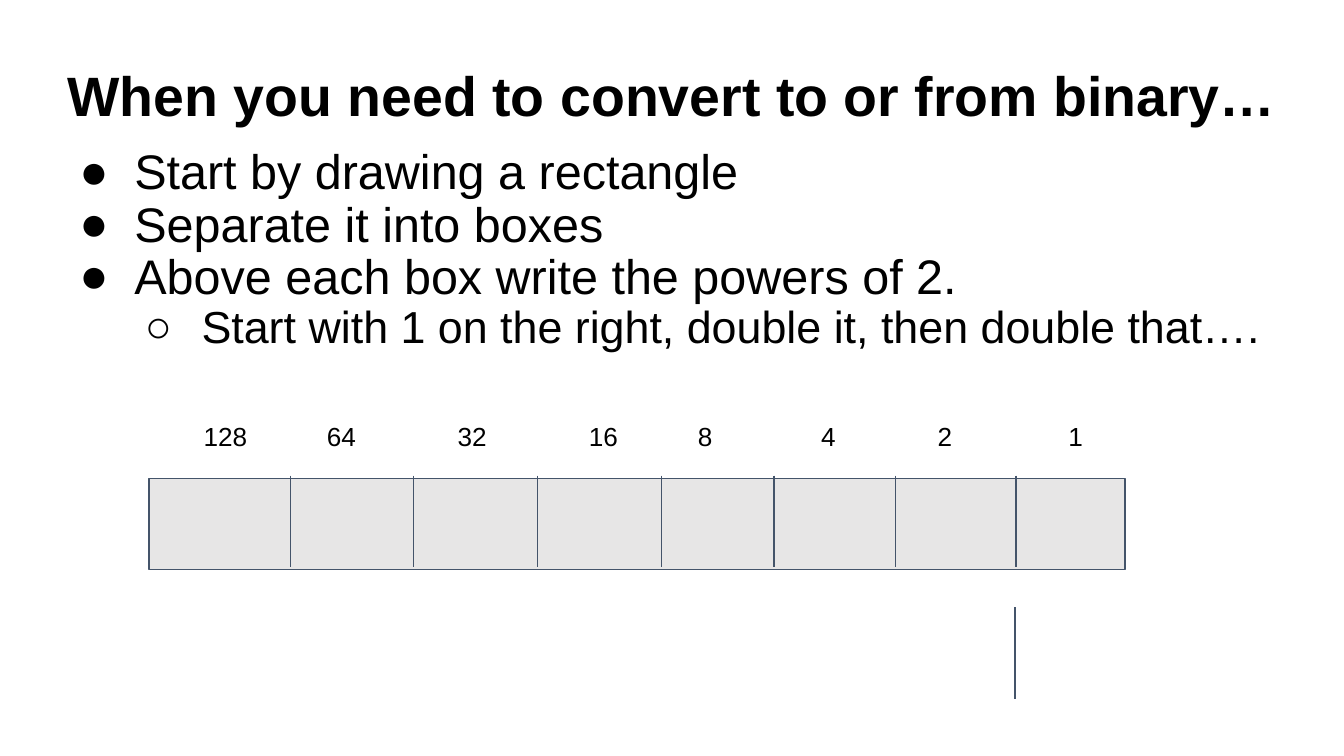
import pptx
import pptx.util
import pptx.dml.color
import pptx.enum.shapes
import pptx.enum.text
import pptx.oxml.ns
from lxml import etree

Cm, Pt = pptx.util.Cm, pptx.util.Pt
RGBColor = pptx.dml.color.RGBColor
ANCHOR = pptx.enum.text.MSO_ANCHOR
qn = pptx.oxml.ns.qn

BLACK = RGBColor(0x00, 0x00, 0x00)
SLATE = RGBColor(0x44, 0x54, 0x6A)
LIGHT_GRAY = RGBColor(0xE7, 0xE6, 0xE6)

# Content
TITLE = "When you need to convert to or from binary…"
STEPS = [  # text, level
    ("Start by drawing a rectangle", 0),
    ("Separate it into boxes", 0),
    ("Above each box write the powers of 2.", 0),
    ("Start with 1 on the right, double it, then double that….", 1),
]
LEVELS = [  # bullet, size, left margin, hanging indent
    ("●", 26, 1.27, 1.04),
    ("○", 24, 2.54, 1.07),
]
# Tab position of each power of two, and the dividers between the boxes, in cm
LABEL_TABS = [0.55, 2.88, 5.35, 7.83, 9.89, 12.22, 14.42, 16.89]
DIVIDERS = [5.49, 7.82, 10.16, 12.5, 14.63, 16.92, 19.2]
POWERS = [2 ** n for n in reversed(range(len(LABEL_TABS)))]
DIVIDER_TOP, DIVIDER_HEIGHT = 8.99, 1.73
SPARE_LINE = (19.18, 11.48)


def add_text(shapes, left, top, width, height, inset=0.13, anchor=ANCHOR.TOP):
    box = shapes.add_textbox(Cm(left), Cm(top), Cm(width), Cm(height))
    frame = box.text_frame
    frame.word_wrap = True
    frame.vertical_anchor = anchor
    frame.margin_left = frame.margin_right = Cm(0.25)
    frame.margin_top = frame.margin_bottom = Cm(inset)
    return frame


def write(paragraph, text, size, bold=False, spacing=None, bullet=None,
          margin=0, hanging=0, tabs=()):
    properties = paragraph._p.get_or_add_pPr()
    if bullet:
        properties.set("marL", str(Cm(margin)))
        properties.set("indent", str(-Cm(hanging)))
        etree.SubElement(properties, qn("a:buFont"), typeface="Arial")
        etree.SubElement(properties, qn("a:buChar"), char=bullet)
    if tabs:
        tab_list = etree.SubElement(properties, qn("a:tabLst"))
        for tab in tabs:
            etree.SubElement(tab_list, qn("a:tab"), pos=str(Cm(tab)), algn="l")
    if spacing:
        paragraph.line_spacing = spacing
    span = paragraph.add_run()
    span.text = text
    span.font.name = "Arial"
    span.font.size = Pt(size)
    span.font.bold = bold
    span.font.color.rgb = BLACK


def add_divider(shapes, x, top):
    line = shapes.add_connector(pptx.enum.shapes.MSO_CONNECTOR.STRAIGHT,
                                Cm(x), Cm(top), Cm(x), Cm(top + DIVIDER_HEIGHT))
    line.line.color.rgb = SLATE
    line.line.width = Pt(0.75)
    etree.SubElement(line._element.spPr, qn("a:effectLst"))


deck = pptx.Presentation()
deck.slide_width, deck.slide_height = Cm(25.4), Cm(14.29)
page = deck.slides.add_slide(deck.slide_layouts[6])

# Title
title = add_text(page.shapes, 1.02, 1.07, 23.4, 1.6, anchor=ANCHOR.MIDDLE)
write(title.paragraphs[0], TITLE, 29.7, bold=True, spacing=0.9)

# Steps
steps = add_text(page.shapes, 1.02, 2.67, 23.4, 10.44)
for index, (text, level) in enumerate(STEPS):
    paragraph = steps.add_paragraph() if index else steps.paragraphs[0]
    paragraph.level = level
    bullet, size, margin, hanging = LEVELS[level]
    write(paragraph, text, size, spacing=0.9, bullet=bullet,
          margin=margin, hanging=hanging)

# Spare divider below the rectangle
add_divider(page.shapes, *SPARE_LINE)

# Rectangle separated into boxes, with the powers of two above
diagram = page.shapes.add_group_shape().shapes
rectangle = diagram.add_shape(pptx.enum.shapes.MSO_SHAPE.RECTANGLE,
                              Cm(2.82), Cm(9.04), Cm(18.44), Cm(1.73))
rectangle.shadow.inherit = False
rectangle.fill.solid()
rectangle.fill.fore_color.rgb = LIGHT_GRAY
rectangle.line.color.rgb = SLATE
rectangle.line.width = Pt(0.75)
for x in DIVIDERS:
    add_divider(diagram, x, DIVIDER_TOP)
labels = add_text(diagram, 3.05, 7.7, 18.54, 1.3, inset=0.25)
write(labels.paragraphs[0], "".join(f"\t{power}" for power in POWERS), 14,
      tabs=LABEL_TABS)

deck.save("out.pptx")
